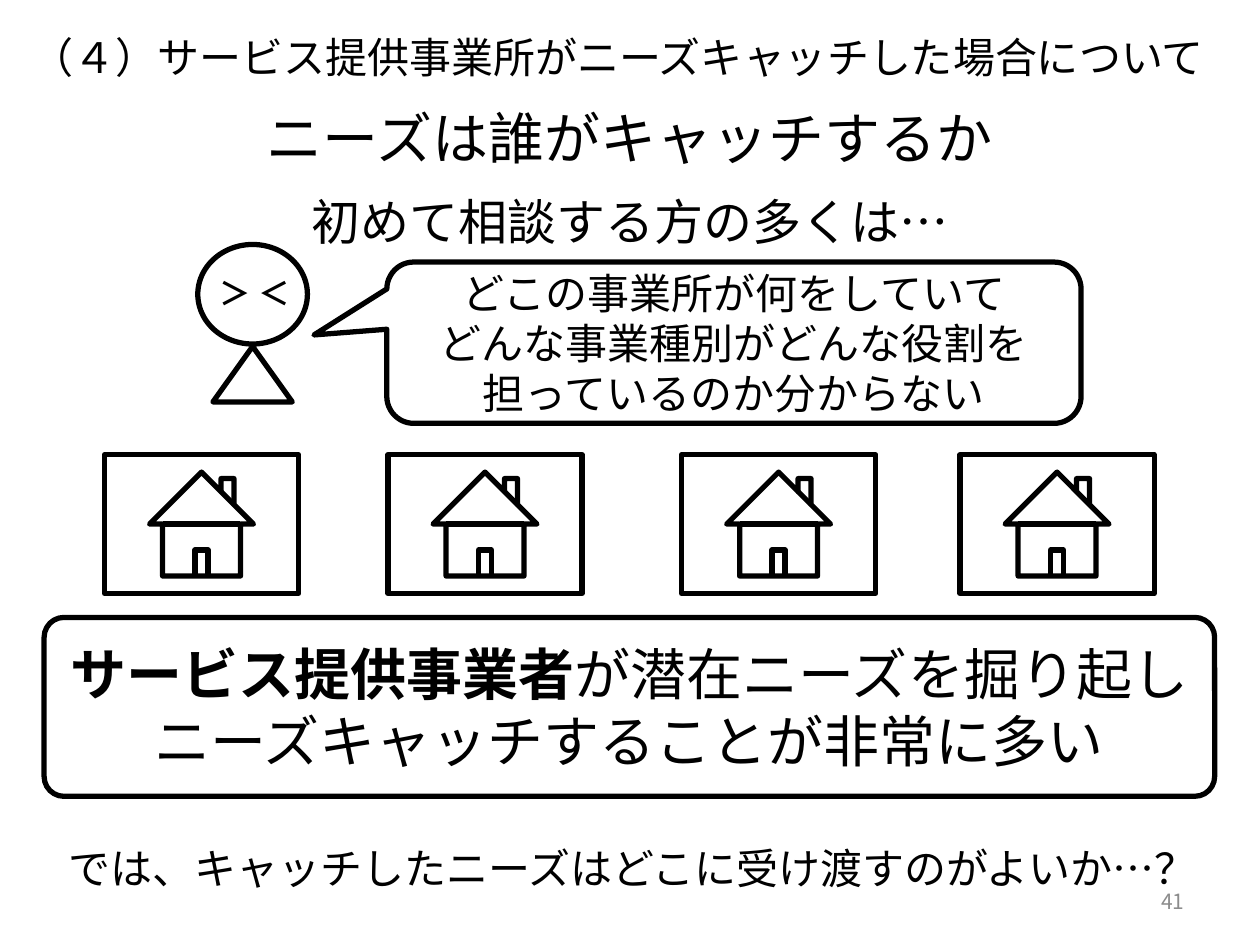
import pptx
import pptx.util
import pptx.dml.color
import pptx.enum.shapes
import pptx.enum.text
import pptx.oxml
import pptx.oxml.ns

COLORS = {"ink": "000000", "number": "8C8C8C"}
FONT = "Noto Sans CJK JP"
SHAPES = pptx.enum.shapes.MSO_SHAPE
ALIGN = pptx.enum.text.PP_ALIGN
ANCHOR = pptx.enum.text.MSO_ANCHOR

presentation = pptx.Presentation()
presentation.slide_width = pptx.util.Inches(10)
presentation.slide_height = pptx.util.Inches(7.5)
slide = presentation.slides.add_slide(presentation.slide_layouts[1])

# Grid of 100 columns by 75 rows
COLUMN = presentation.slide_width / 100
ROW = presentation.slide_height / 75


def write_text(shape, *lines, size=24, bold=False, color="ink", align=ALIGN.CENTER,
               anchor=ANCHOR.MIDDLE, side_margin=1):
    """Write one paragraph per line; a line is a list of (text, bold) runs or a string."""
    frame = shape.text_frame
    frame.word_wrap = True
    frame.auto_size = pptx.enum.text.MSO_AUTO_SIZE.NONE
    frame.vertical_anchor = anchor
    frame.margin_left = frame.margin_right = int(side_margin * COLUMN)
    frame.margin_top = frame.margin_bottom = int(0.5 * ROW)
    for index, line in enumerate(lines):
        paragraph = frame.paragraphs[0] if index == 0 else frame.add_paragraph()
        paragraph.alignment = align
        paragraph.space_before = pptx.util.Pt(0)
        for text, is_bold in [(line, bold)] if isinstance(line, str) else line:
            run = paragraph.add_run()
            run.text = text
            run.font.size = pptx.util.Pt(size)
            run.font.bold = is_bold
            run.font.name = FONT
            run.font.color.rgb = pptx.dml.color.RGBColor.from_string(COLORS[color])
            east_asian = pptx.oxml.parse_xml(
                f'<a:ea {pptx.oxml.ns.nsdecls("a")} typeface="{FONT}"/>')
            run.font._element.find(pptx.oxml.ns.qn("a:latin")).addnext(east_asian)


def add_outline(kind, left, top, width, height, adjustments=(), line_width=3):
    """Add an unfilled shape placed on the grid; a line width of 0 hides the outline."""
    shape = slide.shapes.add_shape(kind, int(left * COLUMN), int(top * ROW),
                                   int(width * COLUMN), int(height * ROW))
    shape.shadow.inherit = False
    shape.fill.background()
    if line_width:
        shape.line.width = pptx.util.Pt(line_width)
        shape.line.color.rgb = pptx.dml.color.RGBColor.from_string(COLORS["ink"])
    else:
        shape.line.fill.background()
    for index, value in enumerate(adjustments):
        shape.adjustments[index] = value
    return shape


# Title and lead-in placeholders
title, body = slide.shapes.title, slide.placeholders[1]
for placeholder, top, height in [(title, 5.4, 11), (body, 14.7, 8.7)]:
    placeholder.left, placeholder.width = int(5 * COLUMN), int(90 * COLUMN)
    placeholder.top, placeholder.height = int(top * ROW), int(height * ROW)
write_text(title, "ニーズは誰がキャッチするか", size=32)
write_text(body, "初めて相談する方の多くは…", size=28, anchor=ANCHOR.TOP)
properties = body.text_frame.paragraphs[0]._p.get_or_add_pPr()
properties.set("marL", "0")
properties.set("indent", "0")
properties.append(pptx.oxml.parse_xml(f'<a:buNone {pptx.oxml.ns.nsdecls("a")}/>'))

# Troubled person: head, body and eyes
add_outline(SHAPES.OVAL, 15.7, 19.4, 8.7, 7.9)
add_outline(SHAPES.ISOSCELES_TRIANGLE, 16.9, 27.5, 6.3, 4.4)
eyes = add_outline(SHAPES.ROUNDED_RECTANGLE, 13.5, 20.5, 13.4, 5.5, line_width=0)
write_text(eyes, "＞ ＜", size=18, bold=True)

# Speech bubble
bubble = add_outline(SHAPES.ROUNDED_RECTANGULAR_CALLOUT, 30.7, 20.8, 55.1, 12.8,
                     adjustments=(-0.605, -0.048, 0.167))
write_text(bubble, "どこの事業所が何をしていて",
           "どんな事業種別がどんな役割を担っているのか分からない", side_margin=3)

# Service offices
for left in (8.3, 30.8, 54.1, 76.2):
    add_outline(SHAPES.ACTION_BUTTON_HOME, left, 36.1, 15.4, 11)

# Key message
message = add_outline(SHAPES.ROUNDED_RECTANGLE, 3.5, 49, 92.9, 14.2, adjustments=(0.111,))
write_text(message, [("サービス提供事業者", True), ("が潜在ニーズを掘り起し", False)],
           "ニーズキャッチすることが非常に多い", size=32, side_margin=0.5)

# Section heading, closing question and page number
captions = [
    ("（４）サービス提供事業所がニーズキャッチした場合について", 0, 1.5, 98, 6, {}),
    ("では、キャッチしたニーズはどこに受け渡すのがよいか…？", 3.7, 65.9, 93, 6, {}),
    ("41", 71.7, 69.5, 23.3, 4, {"size": 12, "color": "number", "align": ALIGN.RIGHT}),
]
for text, left, top, width, height, text_format in captions:
    caption = slide.shapes.add_textbox(int(left * COLUMN), int(top * ROW),
                                       int(width * COLUMN), int(height * ROW))
    write_text(caption, text, **text_format)

presentation.save("out.pptx")
